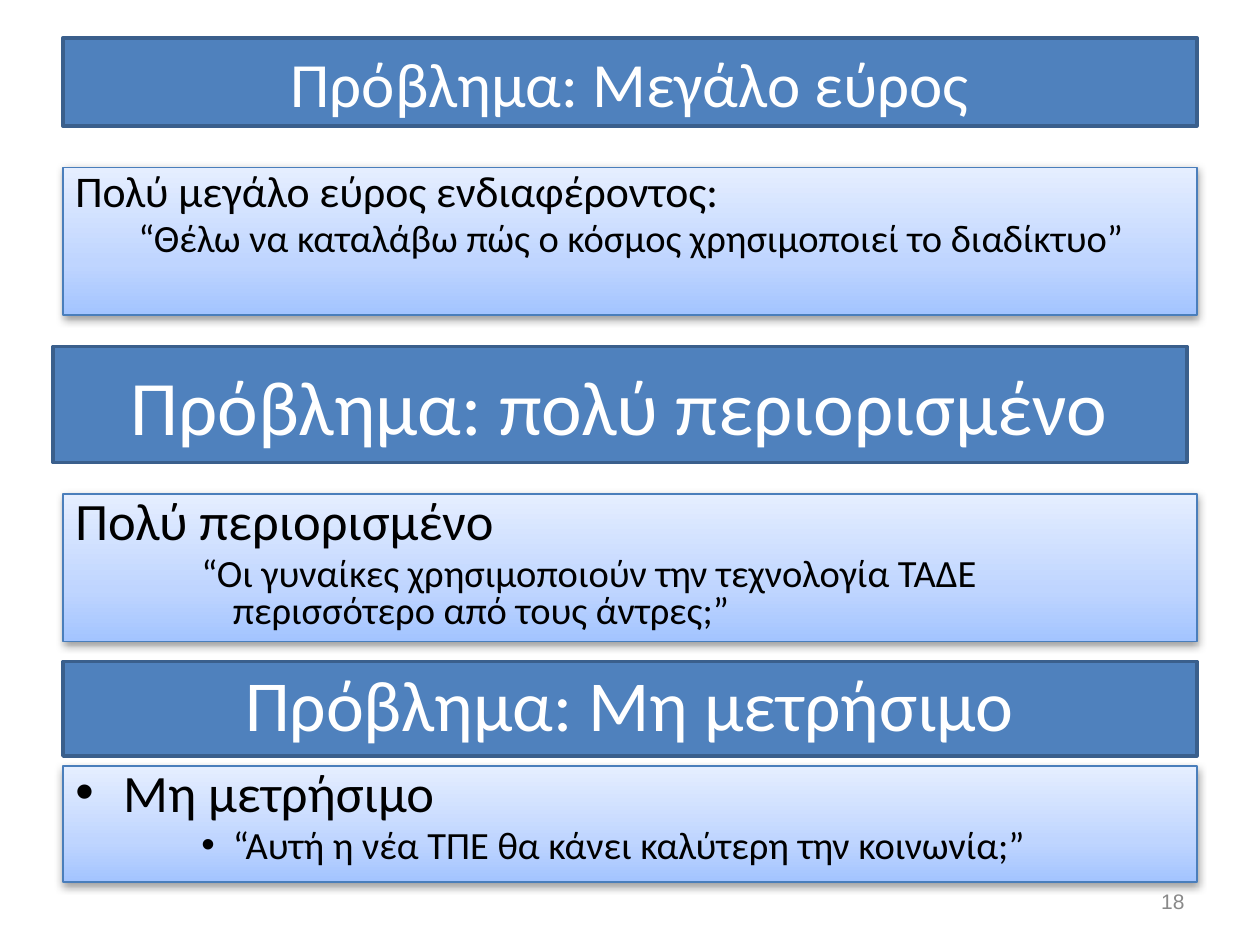
from lxml import etree
from pptx import Presentation
from pptx.dml.color import RGBColor
from pptx.enum.shapes import MSO_SHAPE
from pptx.enum.text import MSO_ANCHOR, PP_ALIGN
from pptx.oxml import parse_xml
from pptx.oxml.ns import qn
from pptx.util import Inches, Pt

BLUE = RGBColor(0x4F, 0x81, 0xBD)
DARK_BLUE = RGBColor(0x3A, 0x5F, 0x8C)
EDGE_BLUE = RGBColor(0x4A, 0x7E, 0xBB)
WHITE = RGBColor(0xFF, 0xFF, 0xFF)
BLACK = RGBColor(0x00, 0x00, 0x00)
GRAY = RGBColor(0x89, 0x89, 0x89)
PANEL_STOPS = [
    (0, RGBColor(0xA3, 0xC4, 0xFF)),
    (35, RGBColor(0xBF, 0xD5, 0xFF)),
    (100, RGBColor(0xE5, 0xEE, 0xFF)),
]
NS = 'xmlns:a="http://schemas.openxmlformats.org/drawingml/2006/main"'


def add_run(p, text, size, color, font="Calibri"):
    r = p.add_run()
    r.text = text
    r.font.name = font
    r.font.size = Pt(size)
    r.font.color.rgb = color


def add_box(slide, box, line_color, line_width):
    sp = slide.shapes.add_shape(MSO_SHAPE.RECTANGLE, *map(Inches, box))
    sp.shadow.inherit = False
    sp.line.color.rgb = line_color
    sp.line.width = Pt(line_width)
    sp.text_frame.word_wrap = True
    return sp


def add_heading(slide, box, text, size, spacing=1.0):
    sp = add_box(slide, box, DARK_BLUE, 2)
    sp.fill.solid()
    sp.fill.fore_color.rgb = BLUE
    sp.text_frame.vertical_anchor = MSO_ANCHOR.MIDDLE
    p = sp.text_frame.paragraphs[0]
    p.alignment = PP_ALIGN.CENTER
    p.line_spacing = spacing
    add_run(p, text, size, WHITE)


def style_panel(sp):
    sp.fill.gradient()
    sp.fill.gradient_angle = 90
    stops = sp._element.spPr.find(".//" + qn("a:gsLst"))
    for stop in list(stops):
        stops.remove(stop)
    for pos, color in PANEL_STOPS:
        stops.append(parse_xml(
            f'<a:gs {NS} pos="{pos * 1000}"><a:srgbClr val="{color}"/></a:gs>'))
    effects = sp._element.spPr.find(qn("a:effectLst"))
    effects.append(parse_xml(
        f'<a:outerShdw {NS} blurRad="{Pt(5)}" dist="{Pt(1.6)}" dir="5400000" rotWithShape="0">'
        '<a:srgbClr val="000000"><a:alpha val="38000"/></a:srgbClr></a:outerShdw>'))


def format_item(p, level, left, hanging, bullet):
    p.level = level
    p.alignment = PP_ALIGN.LEFT
    p.line_spacing = 0.8
    pPr = p._p.get_or_add_pPr()
    pPr.set("marL", str(Inches(left)))
    pPr.set("indent", str(-Inches(hanging)))
    if bullet:
        etree.SubElement(pPr, qn("a:buFont"), typeface="Arial")
        etree.SubElement(pPr, qn("a:buChar"), char="•")
    else:
        etree.SubElement(pPr, qn("a:buNone"))


def add_panel(slide, box, topic, topic_size, quote, level, left, hanging, bullet=False):
    sp = add_box(slide, box, EDGE_BLUE, 0.75)
    style_panel(sp)
    tf = sp.text_frame
    tf.vertical_anchor = MSO_ANCHOR.TOP
    p = tf.paragraphs[0]
    format_item(p, 0, 0.38, 0.38, bullet)
    add_run(p, topic, topic_size, BLACK)
    p = tf.add_paragraph()
    p.space_before = Pt(4.4)
    format_item(p, level, left, hanging, bullet)
    add_run(p, quote, 22, BLACK)


def add_page_number(slide, box, number):
    tf = slide.shapes.add_textbox(*map(Inches, box)).text_frame
    tf.word_wrap = True
    tf.vertical_anchor = MSO_ANCHOR.MIDDLE
    p = tf.paragraphs[0]
    p.alignment = PP_ALIGN.RIGHT
    add_run(p, number, 12, GRAY, "Arial")


def main():
    prs = Presentation()
    prs.slide_width, prs.slide_height = Inches(10), Inches(7.5)
    slide = prs.slides.add_slide(prs.slide_layouts[6])

    add_heading(slide, (0.5, 0.3, 9, 0.7), "Πρόβλημα: Μεγάλο εύρος", 36)
    add_panel(slide, (0.5, 1.33, 9, 1.17), "Πολύ μεγάλο εύρος ενδιαφέροντος:", 25,
              "“Θέλω να καταλάβω πώς ο κόσμος χρησιμοποιεί το διαδίκτυο”", 1, 0.81, 0.31)
    add_page_number(slide, (7.17, 6.95, 2.33, 0.4), "18")

    add_heading(slide, (0.42, 2.75, 9, 0.92), "Πρόβλημα: πολύ περιορισμένο", 44)
    add_panel(slide, (0.5, 3.92, 9, 1.17), "Πολύ περιορισμένο", 30,
              "“Οι γυναίκες χρησιμοποιούν την τεχνολογία ΤΑΔΕ περισσότερο από τους άντρες;”",
              2, 1.25, 0.25)

    add_heading(slide, (0.5, 5.25, 9, 0.75), "Πρόβλημα: Μη μετρήσιμο", 41, 0.9)
    add_panel(slide, (0.5, 6.08, 9, 0.92), "Μη μετρήσιμο", 30,
              "“Αυτή η νέα ΤΠΕ θα κάνει καλύτερη την κοινωνία;”", 2, 1.25, 0.25, bullet=True)

    prs.save("out.pptx")


if __name__ == "__main__":
    main()
